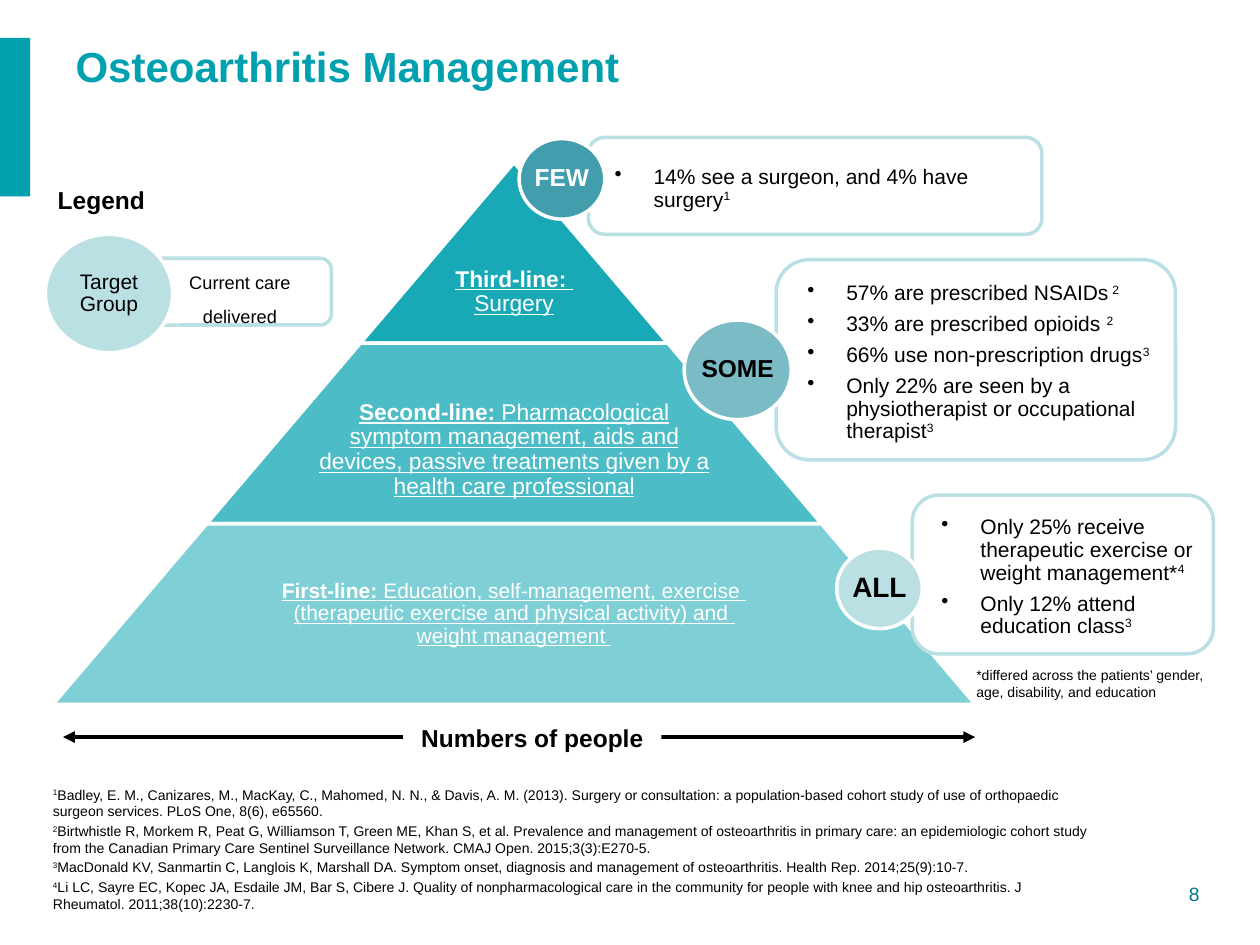
from dataclasses import dataclass
from typing import NamedTuple
from lxml import etree
from pptx import Presentation
from pptx.dml.color import RGBColor
from pptx.enum.shapes import MSO_CONNECTOR, MSO_SHAPE
from pptx.enum.text import MSO_ANCHOR, MSO_AUTO_SIZE, PP_ALIGN
from pptx.oxml.ns import qn
from pptx.util import Inches, Pt

RECT, ROUND = MSO_SHAPE.RECTANGLE, MSO_SHAPE.ROUNDED_RECTANGLE
OVAL, TRAP = MSO_SHAPE.OVAL, MSO_SHAPE.TRAPEZOID
STRAIGHT = MSO_CONNECTOR.STRAIGHT
LEFT, MID, RIGHT = PP_ALIGN.LEFT, PP_ALIGN.CENTER, PP_ALIGN.RIGHT
TOP, CENTER = MSO_ANCHOR.TOP, MSO_ANCHOR.MIDDLE
COLS, ROWS, UNIT = 100, 75, Inches(0.1)


@dataclass(frozen=True)
class Theme:
    """Colours, font and type sizes of the slide."""
    font: str = "Arial"
    main: str = "00A0AF"
    deep: str = "00788A"
    pale: str = "BBE0E3"
    some: str = "7ABBC5"
    few: str = "429EAD"
    ink: str = "000000"
    white: str = "FFFFFF"
    title: int = 24
    key: int = 18
    large: int = 16
    head: int = 14
    band: int = 13
    body: int = 12
    page: int = 11
    note: int = 8


T = Theme()


class Box(NamedTuple):
    """A rectangle in grid columns and rows."""
    x: float
    y: float
    w: float
    h: float

    def sub(self, x, y, w, h):
        """Return a box set by its offset from this one."""
        return Box(self.x + x, self.y + y, w, h)

    def emu(self):
        """Return the four lengths for python-pptx."""
        return [round(v * UNIT) for v in self]


def write(shape, lines, size, color=T.ink, align=LEFT, anchor=TOP, bold=False,
          mark=None, line=None, before=0, after=0, pad=(0.1, 0.05, 0.1, 0.05),
          bullet=False):
    """Fill a shape with paragraphs; text between bars gets the mark."""
    frame = shape.text_frame
    frame.word_wrap = True
    frame.auto_size = MSO_AUTO_SIZE.NONE
    frame.vertical_anchor = anchor
    (frame.margin_left, frame.margin_top,
     frame.margin_right, frame.margin_bottom) = map(Inches, pad)
    for i, text in enumerate(lines):
        para = frame.add_paragraph() if i else frame.paragraphs[0]
        para.alignment = align
        para.space_before, para.space_after = Pt(before), Pt(after)
        if line:
            para.line_spacing = line
        if bullet:
            props = para._p.get_or_add_pPr()
            props.set("marL", str(Inches(0.31)))
            props.set("indent", str(-Inches(0.31)))
            etree.SubElement(props, qn("a:buChar")).set("char", "•")
        for j, piece in enumerate(text.split("|")):
            for k, words in enumerate(piece.split("\n")):
                if k:
                    para.add_line_break()
                if not words:
                    continue
                run = para.add_run()
                run.text = words
                font = run.font
                font.name, font.size, font.bold = T.font, Pt(size), bold
                font.color.rgb = RGBColor.from_string(color)
                if mark == "bold":
                    font.underline = True
                    font.bold = j % 2 == 1
                elif mark == "sup" and j % 2:
                    run._r.get_or_add_rPr().set("baseline", "30000")


def label(slide, box, lines, size, **style):
    """Add a text box."""
    write(slide.shapes.add_textbox(*box.emu()), lines, size, **style)


def form(slide, kind, box, fill, edge=None, alpha=100):
    """Add a flat preset shape."""
    shape = slide.shapes.add_shape(kind, *box.emu())
    shape.shadow.inherit = False
    shape.fill.solid()
    shape.fill.fore_color.rgb = RGBColor.from_string(fill)
    if alpha < 100:
        tint = shape._element.spPr.find(qn("a:solidFill"))[0]
        etree.SubElement(tint, qn("a:alpha")).set("val", str(alpha * 1000))
    if edge:
        shape.line.color.rgb = RGBColor.from_string(edge)
        shape.line.width = Pt(2)
    else:
        shape.line.fill.background()
    return shape


def header(slide, box):
    """Place the side bar, the title and the page number."""
    form(slide, RECT, box.sub(0, 3, 2.4, 12.6), T.main)
    title = slide.shapes.title
    title.left, title.top, title.width, title.height = box.sub(5, 3, 90.2, 4.5).emu()
    write(title, ["Osteoarthritis Management"], T.title, color=T.main,
          bold=True, anchor=CENTER)
    label(slide, box.sub(84.5, 69.5, 11.7, 2.9), ["8"], T.page,
          color=T.deep, align=RIGHT)


def pyramid(slide, box):
    """Stack the bands, each one step wider than the one above."""
    bands = [
        ("|Third-line:| \nSurgery", T.band, 90, 1, 3.1),
        ("|Second-line: |Pharmacological symptom management, aids and devices, "
         "passive treatments given by a health care professional", T.band, 70, 0.65, 1.3),
        ("|First-line:| Education, self-management, exercise \n(therapeutic exercise "
         "and physical activity) and \nweight management ", T.body, 50, 0.65, 0)]
    step, high = box.w / len(bands), box.h / len(bands)
    for i, (text, size, alpha, share, drop) in enumerate(bands):
        wide = step * (i + 1)
        band = box.sub((box.w - wide) / 2, i * high, wide, high)
        shape = form(slide, TRAP, band, T.main, T.white, alpha)
        shape.adjustments[0] = step / 2 / high
        inner = band.sub(wide * (1 - share) / 2, drop, wide * share, high)
        label(slide, inner, [text], size, color=T.white, align=MID,
              anchor=CENTER, mark="bold", line=0.9, pad=(0.02,) * 4)


def axis(slide, box):
    """Draw the double arrow with its caption."""
    x, y, w, h = box.emu()
    mid = y + h // 2
    arrow = slide.shapes.add_connector(STRAIGHT, x, mid, x + w, mid)
    arrow.line.color.rgb = RGBColor.from_string(T.ink)
    arrow.line.width = Pt(2.25)
    props = arrow._element.spPr
    for tip in ("a:headEnd", "a:tailEnd"):
        etree.SubElement(props.get_or_add_ln(), qn(tip)).set("type", "triangle")
    etree.SubElement(props, qn("a:effectLst"))
    cover = form(slide, RECT, box.sub(27, 0.1, 20.5, box.h), T.white)
    write(cover, ["Numbers of people"], T.head, bold=True, align=MID)


def callout(slide, box, lines, size, badge, name, fill, style, **text):
    """Place a rounded card with a round badge at its left side."""
    card = form(slide, ROUND, box, T.white, T.pale, 90)
    write(card, lines, size, anchor=CENTER, mark="sup", line=0.9, **text)
    disc = form(slide, OVAL, box.sub(*badge), fill, T.white)
    write(disc, [name], align=MID, anchor=CENTER, line=0.9, pad=(0,) * 4, **style)


def legend(slide, box):
    """Explain the badge and the card."""
    label(slide, box.sub(0, 0, 10, 3.4), ["Legend"], T.head, bold=True)
    callout(slide, box.sub(7.1, 6.3, 15.6, 5.3), ["|Current care delivered|"], T.key,
            (-7.1, -1.9, 10.1, 9.4), "Target\nGroup", T.pale, {"size": T.body},
            align=MID, pad=(0.25, 0.23, 0.14, 0))


def cards(slide, box):
    """Place the three findings down the right side of the pyramid."""
    rows = [
        ((5.5, 0, 36, 7.7), (-5.5, 0.1, 6.8, 6.4), "FEW", T.head, T.few, T.white,
         ["14% see a surgeon, and 4% have surgery|1|"]),
        ((20.4, 9.7, 31.7, 15.9), (-7.3, 4.8, 8.5, 7.9), "SOME", T.head, T.some, T.ink,
         ["57% are prescribed NSAIDs| 2|", "33% are prescribed opioids |2|",
          "66% use non-prescription drugs|3|",
          "Only 22% are seen by a physiotherapist or occupational therapist|3|"]),
        ((31.2, 28.4, 23.9, 12.6), (-6, 4.2, 6.8, 6.4), "ALL", T.large, T.pale, T.ink,
         ["Only 25% receive therapeutic exercise or weight management*|4|",
          "Only 12% attend education class|3|"])]
    for spot, badge, name, size, fill, color, lines in rows:
        callout(slide, box.sub(*spot), lines, T.body, badge, name, fill,
                {"size": size, "color": color, "bold": True},
                bullet=True, after=4.8, pad=(0.17, 0.05, 0, 0))


def notes(slide, box):
    """Place the footnote and the numbered references."""
    label(slide, box.sub(76.2, 0, 20.4, 3.7),
          ["*differed across the patients’ gender, age, disability, and education"], T.note)
    label(slide, box.sub(0, 9.5, 87.5, 13.5), [
        "|1|Badley, E. M., Canizares, M., MacKay, C., Mahomed, N. N., & Davis, A. M. (2013). "
        "Surgery or consultation: a population-based cohort study of use of orthopaedic "
        "surgeon services. PLoS One, 8(6), e65560.",
        "|2|Birtwhistle R, Morkem R, Peat G, Williamson T, Green ME, Khan S, et al. "
        "Prevalence and management of osteoarthritis in primary care: an epidemiologic cohort "
        "study from the Canadian Primary Care Sentinel Surveillance Network. "
        "CMAJ Open. 2015;3(3):E270-5.",
        "|3|MacDonald KV, Sanmartin C, Langlois K, Marshall DA. Symptom onset, diagnosis and "
        "management of osteoarthritis. Health Rep. 2014;25(9):10-7.",
        "|4|Li LC, Sayre EC, Kopec JA, Esdaile JM, Bar S, Cibere J. Quality of "
        "nonpharmacological care in the community for people with knee and hip "
        "osteoarthritis. J Rheumatol. 2011;38(10):2230-7."],
        T.note, mark="sup", before=1.6, pad=(0.39, 0.05, 0.1, 0.05))


def main():
    """Build and save the slide."""
    deck = Presentation()
    deck.slide_width, deck.slide_height = COLS * UNIT, ROWS * UNIT
    slide = deck.slides.add_slide(deck.slide_layouts[5])
    header(slide, Box(0, 0, COLS, ROWS))
    pyramid(slide, Box(4.2, 12.9, 73.2, 43))
    axis(slide, Box(5, 56.8, 72.4, 3.4))
    cards(slide, Box(41.2, 10.9, 55.1, 41))
    legend(slide, Box(3.6, 14.2, 22.7, 13.8))
    notes(slide, Box(0.3, 52.4, 96.6, 22.6))
    deck.save("out.pptx")


if __name__ == "__main__":
    main()
